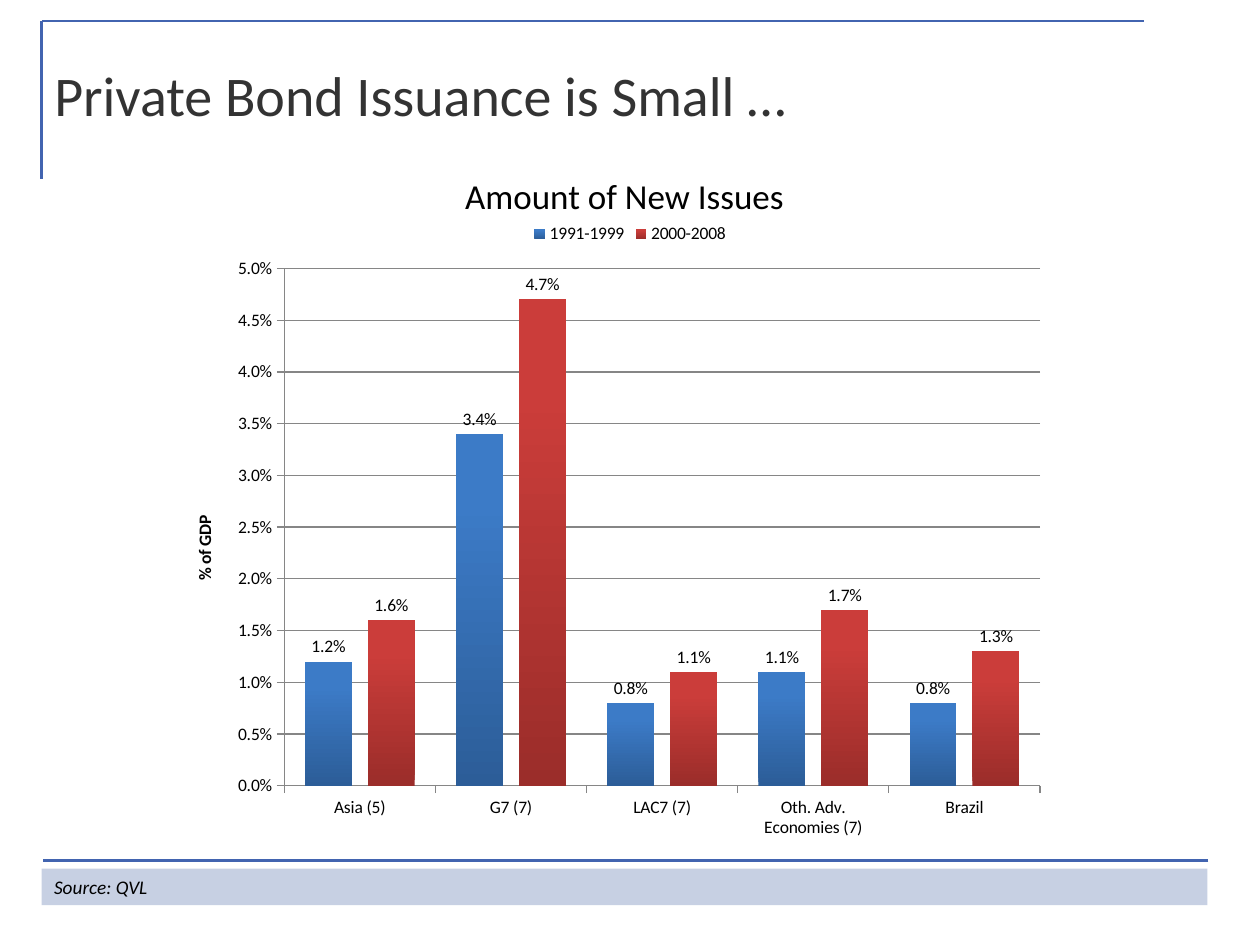
from lxml.etree import SubElement
from pptx import Presentation
from pptx.chart.data import CategoryChartData
from pptx.dml.color import RGBColor
from pptx.enum.chart import (XL_CHART_TYPE, XL_LABEL_POSITION as LabelPos,
                             XL_LEGEND_POSITION as LegendPos, XL_TICK_MARK as Tick)
from pptx.enum.shapes import MSO_CONNECTOR as Connector, MSO_SHAPE as Shape
from pptx.enum.text import MSO_ANCHOR as Anchor, PP_ALIGN as Align
from pptx.oxml import parse_xml
from pptx.oxml.ns import nsdecls, qn
from pptx.util import Cm, Pt

FONT = "Calibri"
BLACK, TITLE_GREY, GRID_GREY = "000000", "333333", "868686"
RULE_BLUE, BAND_BLUE = "4264B0", "C7D0E3"
LEFT = 0.84

REGIONS = ["Asia (5)", "G7 (7)", "LAC7 (7)", "Oth. Adv. Economies (7)", "Brazil"]
# period: (values, bottom colour, top colour)
PERIODS = {
    "1991-1999": ([0.012, 0.034, 0.008, 0.011, 0.008], "2C5D98", "3C7BC7"),
    "2000-2008": ([0.016, 0.047, 0.011, 0.017, 0.013], "9B2D2A", "CB3D3A"),
}
PLOT_AREA = {"x": 0.108, "y": 0.086, "w": 0.857, "h": 0.758}


def rgb(hex_colour):
    return RGBColor.from_string(hex_colour)


def style_font(font, size, colour=BLACK, bold=False, italic=False):
    font.name = FONT
    font.size = Pt(size)
    font.color.rgb = rgb(colour)
    font.bold = bold
    font.italic = italic


def write(frame, text, size, colour=BLACK, align=Align.LEFT, italic=False):
    frame.text = text
    frame.vertical_anchor = Anchor.MIDDLE
    paragraph = frame.paragraphs[0]
    paragraph.alignment = align
    style_font(paragraph.runs[0].font, size, colour, italic=italic)


def place(shape, left, top, width, height):
    shape.left, shape.top = Cm(left), Cm(top)
    shape.width, shape.height = Cm(width), Cm(height)


def add_rule(slide, x1, y1, x2, y2):
    rule = slide.shapes.add_connector(Connector.STRAIGHT, Cm(x1), Cm(y1), Cm(x2), Cm(y2))
    rule.line.color.rgb = rgb(RULE_BLUE)
    rule.line.width = Pt(1.5)
    SubElement(rule._element.spPr, qn("a:effectLst"))


def add_title(slide, text):
    title = slide.shapes.title
    place(title, LEFT, 0.42, 24.13, 2.96)
    write(title.text_frame, text, 32, TITLE_GREY)


def add_chart_heading(slide, text):
    heading = slide.shapes.add_textbox(Cm(9.1), Cm(3.39), Cm(6.98), Cm(1.11))
    write(heading.text_frame, text, 20, align=Align.CENTER)


def add_source_band(slide, text):
    band = slide.shapes.add_shape(Shape.RECTANGLE, Cm(LEFT), Cm(17.51), Cm(23.5), Cm(0.74))
    band.shadow.inherit = False
    band.fill.solid()
    band.fill.fore_color.rgb = rgb(BAND_BLUE)
    band.line.fill.background()
    write(band.text_frame, text, 11, italic=True)


def style_axis(axis):
    axis.major_tick_mark = Tick.OUTSIDE
    axis.minor_tick_mark = Tick.NONE
    axis.format.line.color.rgb = rgb(GRID_GREY)


def style_value_axis(axis):
    style_axis(axis)
    axis.minimum_scale, axis.maximum_scale, axis.major_unit = 0, 0.05, 0.005
    axis.tick_labels.number_format = "0.0%"
    axis.tick_labels.number_format_is_linked = False
    axis.major_gridlines.format.line.color.rgb = rgb(GRID_GREY)
    frame = axis.axis_title.text_frame
    frame.text = "% of GDP"
    style_font(frame.paragraphs[0].runs[0].font, 10, bold=True)
    body = frame._txBody.bodyPr
    body.set("rot", "-5400000")
    body.set("vert", "horz")


def style_series(series, bottom, top):
    fill = series.format.fill
    fill.gradient()
    fill.gradient_angle = 90
    for stop, position, colour in zip(fill.gradient_stops, (0, 0.8), (bottom, top)):
        stop.position = position
        stop.color.rgb = rgb(colour)
    labels = series.data_labels
    labels.show_value = True
    labels.number_format = "0.0%"
    labels.number_format_is_linked = False
    labels.position = LabelPos.OUTSIDE_END
    style_font(labels.font, 10)


def fix_plot_area(chart):
    """Pin the inner plot area to fractions of the chart frame."""
    modes = "".join(f'<c:{side}Mode val="edge"/>' for side in "xy")
    sizes = "".join(f'<c:{key} val="{value}"/>' for key, value in PLOT_AREA.items())
    layout = parse_xml(f'<c:layout {nsdecls("c")}><c:manualLayout>'
                       f'<c:layoutTarget val="inner"/>{modes}{sizes}'
                       '</c:manualLayout></c:layout>')
    plot_area = chart._chartSpace.chart.plotArea
    for existing in plot_area.findall(qn("c:layout")):
        plot_area.remove(existing)
    plot_area.insert(0, layout)


def add_issuance_chart(slide):
    data = CategoryChartData(number_format="0.0%")
    data.categories = REGIONS
    for period, (values, _, _) in PERIODS.items():
        data.add_series(period, values)
    chart = slide.shapes.add_chart(XL_CHART_TYPE.COLUMN_CLUSTERED, Cm(3.81), Cm(4.23),
                                   Cm(17.78), Cm(13.76), data).chart
    style_font(chart.font, 10)
    chart.has_title = False
    chart.has_legend = True
    chart.legend.position = LegendPos.TOP
    chart.legend.include_in_layout = False
    style_font(chart.legend.font, 10)
    plot = chart.plots[0]
    plot.gap_width, plot.overlap, plot.vary_by_categories = 88, -34, False
    for series, (_, bottom, top) in zip(plot.series, PERIODS.values()):
        style_series(series, bottom, top)
    style_axis(chart.category_axis)
    style_value_axis(chart.value_axis)
    fix_plot_area(chart)


def main():
    deck = Presentation()
    deck.slide_width, deck.slide_height = Cm(25.4), Cm(19.05)
    slide = deck.slides.add_slide(deck.slide_layouts[5])
    add_rule(slide, 23.06, 0.42, LEFT, 0.42)
    add_rule(slide, LEFT, 0.42, LEFT, 3.61)
    add_rule(slide, 24.36, 17.35, 0.87, 17.35)
    add_chart_heading(slide, "Amount of New Issues")
    add_title(slide, "Private Bond Issuance is Small …")
    add_source_band(slide, "Source: QVL")
    add_issuance_chart(slide)
    deck.save("out.pptx")


if __name__ == "__main__":
    main()
